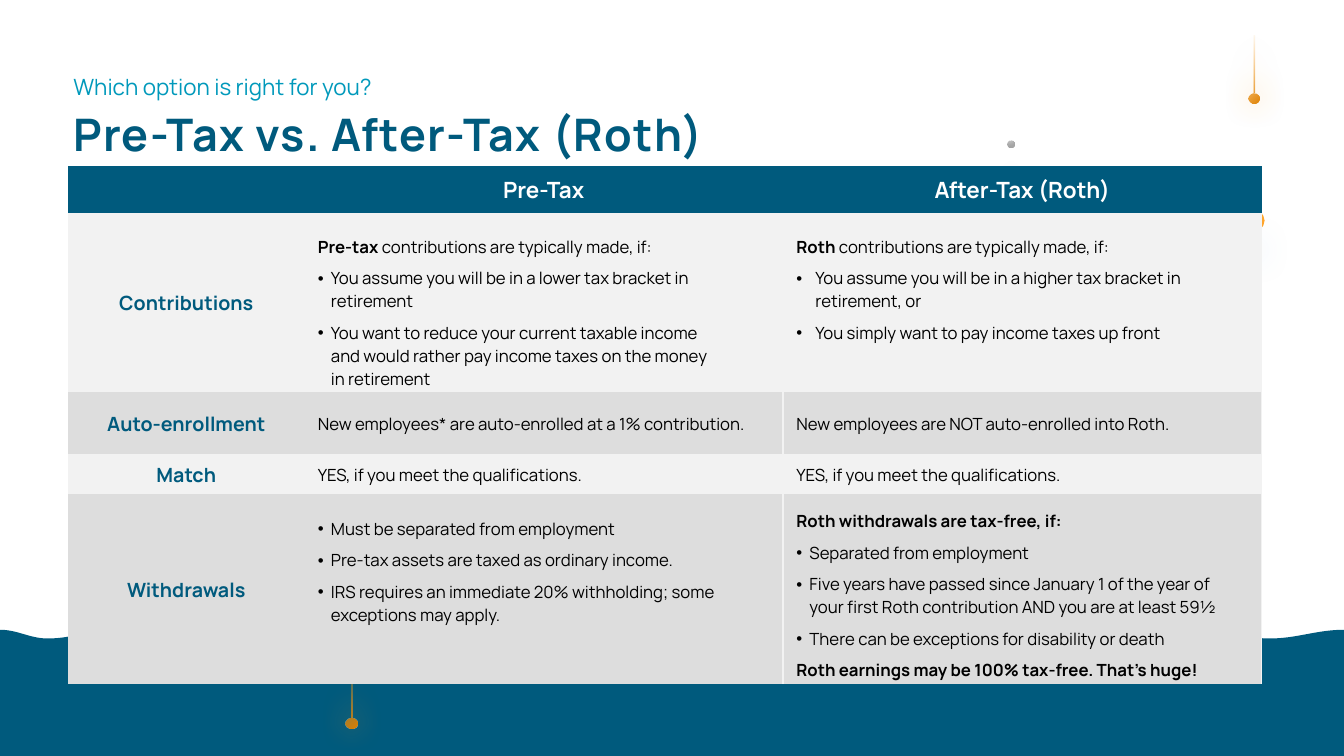
import pptx
import pptx.dml.color
import pptx.enum.shapes
import pptx.enum.text
import pptx.oxml
import pptx.oxml.ns
import pptx.util

Cm, Pt, qn = pptx.util.Cm, pptx.util.Pt, pptx.oxml.ns.qn
ANCHOR = pptx.enum.text.MSO_ANCHOR
FONT = "Manrope"
W, H = 33.87, 19.05
COLORS = {"navy": "005A7D", "teal": "0099BB", "orange": "FFA52B", "amber": "E08100",
          "grey": "A5A5A5", "blue": "5B9BD5", "white": "FFFFFF", "black": "000000",
          "light": "F2F2F2", "dark": "DDDDDD"}

# Text formats
TITLE = {"size": Pt(32), "bold": True, "name": FONT}
SUBTITLE = {"size": Pt(16), "bold": False, "name": FONT}
HEADER = {"size": Pt(16), "bold": True, "name": FONT}
LABEL = {"size": Pt(14), "bold": True, "name": FONT}
BODY = {"size": Pt(12), "bold": False, "name": FONT}

# Left margin and first-line indent of each paragraph kind, in cm
INDENTS = {"center": (0, 0), "plain": (0.31, 0), "bullet": (0.64, -0.33), "wide": (0.79, -0.48)}

# Shadow: colour, opacity %, blur pt, distance pt, direction in degrees
GLOW = ("orange", 70, 21, 0, 0)
SOFT = ("blue", 12, 23, 21, 90)

# Crests and troughs of the wave in turn, in cm from the left
WAVE = [0, 1.2, 2.92, 5.03, 7.49, 8.89, 10.6, 12.95, 14.53, 16.76, 18.24,
        20.45, 22.86, 24.31, 25.86, 28.14, 30.2, 32, W]

# Dots: left, top, size in cm, colour
DOTS = [(25.4, 3.55, 0.16, "grey"), (14.48, 16.48, 0.16, "white"), (28.78, 13.18, 1.68, "orange"),
        (31.37, 5.31, 0.5, "orange"), (15.57, 4.93, 0.16, "grey"), (29.97, 15.7, 0.16, "grey")]

COLUMNS = [5.95, 12.06, 12.07]
ROWS = [1.18, 4.51, 1.56, 1.02, 4.78]
MADE = " contributions are typically made, if:"
MATCH = [("plain", "", "YES, if you meet the qualifications.")]
# Row: label, then per cell the space above (None centres it) and paragraphs of kind, bold, regular
BODY_ROWS = [
    ("Contributions",
     (0.56, [("plain", "Pre-tax", MADE),
             ("bullet", "", "You assume you will be in a lower tax bracket in \nretirement"),
             ("bullet", "", "You want to reduce your current taxable income\n"
                            "and would rather pay income taxes on the money\nin retirement")]),
     (0.56, [("plain", "Roth", MADE),
             ("wide", "", "You assume you will be in a higher tax bracket in retirement, or"),
             ("wide", "", "You simply want to pay income taxes up front")])),
    ("Auto-enrollment",
     (None, [("plain", "", "New employees* are auto-enrolled at a 1% contribution.")]),
     (None, [("plain", "", "New employees are NOT auto-enrolled into Roth.")])),
    ("Match", (None, MATCH), (None, MATCH)),
    ("Withdrawals",
     (0.58, [("bullet", "", "Must be separated from employment"),
             ("bullet", "", "Pre-tax assets are taxed as ordinary income."),
             ("bullet", "", "IRS requires an immediate 20% withholding; some exceptions may apply.")]),
     (0.39, [("plain", "Roth withdrawals are tax-free, if:", ""),
             ("bullet", "", "Separated from employment"),
             ("bullet", "", "Five years have passed since January 1 of the year of \n"
                            "your first Roth contribution AND you are at least 59½"),
             ("bullet", "", "There can be exceptions for disability or death"),
             ("plain", "Roth earnings may be 100% tax-free. That’s huge!", "")])),
]

def rgb(color):
    return pptx.dml.color.RGBColor.from_string(COLORS[color])

def xml(tag, attrs="", inner=""):
    return pptx.oxml.parse_xml(f'<a:{tag} {pptx.oxml.ns.nsdecls("a")} {attrs}>{inner}</a:{tag}>')

def color_xml(color, alpha=100):
    return f'<a:srgbClr val="{COLORS[color]}"><a:alpha val="{alpha * 1000}"/></a:srgbClr>'

def paint(s, color, shadow=None):
    s.fill.solid()
    s.fill.fore_color.rgb = rgb(color)
    s.line.fill.background()
    s.shadow.inherit = False
    if shadow:
        name, alpha, blur, dist, angle = shadow
        attrs = f'blurRad="{Pt(blur)}" dist="{Pt(dist)}" dir="{angle * 60000}" algn="ctr" rotWithShape="0"'
        s._element.spPr.find(qn("a:effectLst")).append(xml("outerShdw", attrs, color_xml(name, alpha)))

def paint_gradient(s, start, alpha, end, shade):
    stops = f'<a:gs pos="0">{color_xml(start, alpha)}</a:gs><a:gs pos="100000">{color_xml(end)}</a:gs>'
    spPr = s._element.spPr
    spPr.replace(spPr.find(qn("a:solidFill")), xml("gradFill", "", f"<a:gsLst>{stops}</a:gsLst>{shade}"))

def add_outline(slide, start, segments):
    """A segment holds one point for a line, three for a curve."""
    builder = slide.shapes.build_freeform(Cm(start[0]), Cm(start[1]), scale=1.0)
    builder.add_line_segments([(Cm(x), Cm(y)) for seg in segments for x, y in seg], close=True)
    s = builder.convert_to_shape()
    lines = iter(list(s._element.iter(qn("a:lnTo"))))
    for seg in segments:
        parts = [next(lines) for _ in seg]
        if len(seg) == 3:
            curve = xml("cubicBezTo")
            parts[0].addprevious(curve)
            for part in parts:
                curve.append(part[0])
                part.getparent().remove(part)
    return s

def add_wave(slide, top, height):
    segments = [[(0, top)]]
    for i, (x0, x1) in enumerate(zip(WAVE, WAVE[1:])):
        y0, y1 = top + height * (i % 2), top + height * (1 - i % 2)
        bend = 0.37 * (x1 - x0)
        segments.append([(x0 + bend, y0), (x1 - bend, y1), (x1, y1)])
    paint(add_outline(slide, (0, H), segments + [[(W, H)]]), "navy")

def add_drop(slide, x, y, width=0.28, height=1.73):
    """A thin stem with a round bead at its foot."""
    r, stem = width / 2, 0.02
    cx, cy, k = x + r, y + height - r, 0.55
    quarters = [((k, -1), (1, -k), (1, 0)), ((1, k), (k, 1), (0, 1)),
                ((-k, 1), (-1, k), (-1, 0)), ((-1, -k), (-k, -1), (0, -1))]
    bead = [[(cx + r * u, cy + r * v) for u, v in quarter] for quarter in quarters]
    neck = cy - r
    s = add_outline(slide, (cx - stem, y), [[(cx + stem, y)], [(cx + stem, neck)], [(cx, neck)],
                                            *bead, [(cx - stem, neck)]])
    paint(s, "orange", GLOW)
    paint_gradient(s, "orange", 0, "amber", '<a:lin ang="2700000" scaled="0"/>')

def add_dot(slide, x, y, size, color):
    s = slide.shapes.add_shape(pptx.enum.shapes.MSO_SHAPE.OVAL, Cm(x), Cm(y), Cm(size), Cm(size))
    paint(s, color, SOFT)
    if color == "grey":
        rect = '<a:fillToRect l="38000" t="-20000" r="62000" b="120000"/>'
        paint_gradient(s, color, 65, color, f'<a:path path="circle">{rect}</a:path>')

def add_run(p, text, fmt, color):
    for i, line in enumerate(text.split("\n")):
        if i:
            p.add_line_break()
        r = p.add_run()
        r.text = line
        for name, value in fmt.items():
            setattr(r.font, name, value)
        r.font.color.rgb = rgb(color)
    return r

def add_heading(slide, x, y, w, h, text, fmt, color, line_spacing=1.0, tracking=0):
    tf = slide.shapes.add_textbox(Cm(x), Cm(y), Cm(w), Cm(h)).text_frame
    tf.word_wrap = True
    for side in ("left", "top", "right", "bottom"):
        setattr(tf, f"margin_{side}", Cm(0.13))
    tf.paragraphs[0].line_spacing = line_spacing
    r = add_run(tf.paragraphs[0], text, fmt, color)
    r.font._element.set("spc", str(tracking))

def fill_cell(cell, fill, paragraphs, fmt, color, above=None):
    cell.fill.solid()
    cell.fill.fore_color.rgb = rgb(fill)
    cell.vertical_anchor = ANCHOR.MIDDLE if above is None else ANCHOR.TOP
    for side, value in {"left": 0.03, "top": above or 0.03, "right": 0.03, "bottom": 0}.items():
        setattr(cell, f"margin_{side}", Cm(value))
    for i, (kind, strong, regular) in enumerate(paragraphs):
        p = cell.text_frame.paragraphs[0] if i == 0 else cell.text_frame.add_paragraph()
        if kind == "center":
            p.alignment = pptx.enum.text.PP_ALIGN.CENTER
        p.space_after = Pt(6 if i < len(paragraphs) - 1 else 0)
        pPr = p._p.get_or_add_pPr()
        for name, value in zip(("marL", "indent"), INDENTS[kind]):
            pPr.set(name, str(Cm(value)))
        if kind in ("bullet", "wide"):
            pPr.extend([xml("buFont", 'typeface="Arial"'), xml("buChar", 'char="•"')])
        for text, bold in ((strong, True), (regular, False)):
            if text:
                add_run(p, text, {**fmt, "bold": bold}, color)

def add_comparison(slide, x, y):
    frame = slide.shapes.add_table(len(ROWS), len(COLUMNS), Cm(x), Cm(y), Cm(sum(COLUMNS)), Cm(sum(ROWS)))
    table = frame.table
    table.horz_banding = False
    # Plain style without grid
    next(frame._element.iter(qn("a:tableStyleId"))).text = "{2D5ABB26-0587-4C30-8999-92F81FD0307C}"
    for column, width in zip(table.columns, COLUMNS):
        column.width = Cm(width)
    for row, height in zip(table.rows, ROWS):
        row.height = Cm(height)
    for c, text in enumerate(("", "Pre-Tax", "After-Tax (Roth)")):
        fill_cell(table.cell(0, c), "navy", [("center", text, "")], HEADER, "white")
    for r, (label, *cells) in enumerate(BODY_ROWS, 1):
        fill = "light" if r % 2 else "dark"
        fill_cell(table.cell(r, 0), fill, [("center", label, "")], LABEL, "navy")
        for c, (above, paragraphs) in enumerate(cells, 1):
            cell = table.cell(r, c)
            fill_cell(cell, fill, paragraphs, BODY, "black", above)
            for i, side in enumerate(("lnR",) if c == 1 else ("lnL", "lnR")):
                line = xml(side, 'w="12700"', f'<a:solidFill>{color_xml("light")}</a:solidFill>')
                cell._tc.get_or_add_tcPr().insert(i, line)

def main():
    prs = pptx.Presentation()
    prs.slide_width, prs.slide_height = Cm(W), Cm(H)
    slide = prs.slides.add_slide(prs.slide_layouts[6])
    # Background decoration
    add_wave(slide, 15.87, 0.22)
    for dot in DOTS:
        add_dot(slide, *dot)
    for x, y in ((31.47, 0.89), (8.72, 16.63)):
        add_drop(slide, x, y)
    # Headings and table
    add_heading(slide, 1.72, 2.57, 18.44, 1.63, "Pre-Tax vs. After-Tax (Roth)", TITLE, "navy", tracking=94)
    add_heading(slide, 1.72, 1.37, 12.9, 1.19, "Which option is right for you?", SUBTITLE, "teal", 1.5)
    add_comparison(slide, 1.72, 4.19)
    prs.save("out.pptx")

if __name__ == "__main__":
    main()
